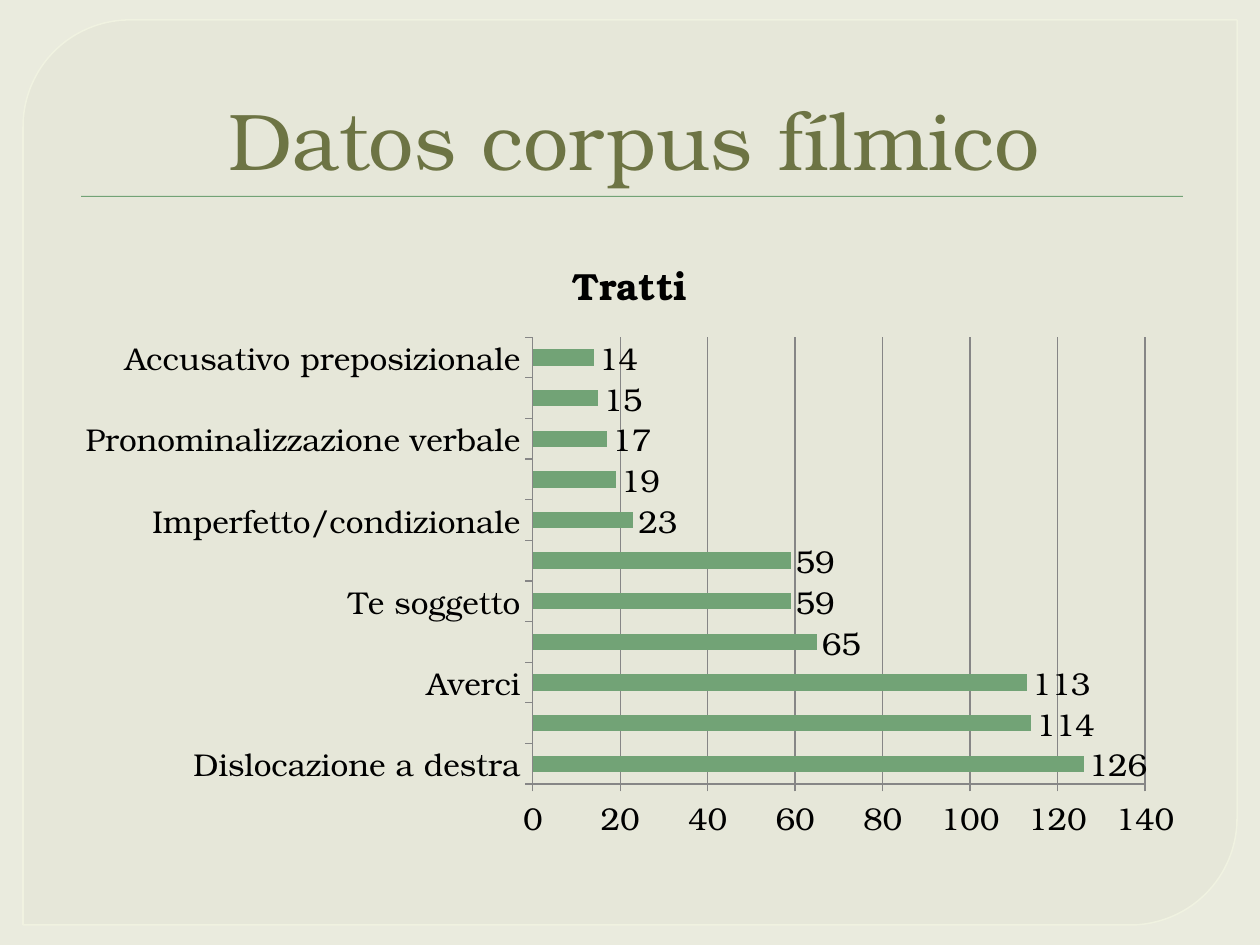
from lxml import etree
from pptx import Presentation
from pptx.chart.data import CategoryChartData
from pptx.dml.color import RGBColor
from pptx.enum.chart import XL_CHART_TYPE, XL_LABEL_POSITION, XL_TICK_MARK
from pptx.enum.shapes import MSO_SHAPE
from pptx.enum.text import MSO_ANCHOR, PP_ALIGN
from pptx.oxml.ns import qn
from pptx.util import Pt

BAR = XL_CHART_TYPE.BAR_CLUSTERED
OUTSIDE_END = XL_LABEL_POSITION.OUTSIDE_END
TICK_OUT = XL_TICK_MARK.OUTSIDE
PANEL_SHAPE = MSO_SHAPE.ROUND_2_DIAG_RECTANGLE
RULE_SHAPE = MSO_SHAPE.RECTANGLE

FONT = "TeX Gyre Bonum"
COLORS = {
    "background": "EAEBDE",
    "panel": "E5E6D7",
    "panel_edge": "F2F4E2",
    "green": "72A376",
    "heading": "6D7444",
    "text": "000000",
    "grid": "868686",
}
HEADING = "Datos corpus fílmico"
CHART_TITLE = "Tratti"
TRAITS = [
    ("Dislocazione a destra", 126),
    ("Dislocazione a sinistra", 114),
    ("Averci", 113),
    ("Congiuntivo/indicativo", 65),
    ("Te soggetto", 59),
    ("Doppio dativo", 59),
    ("Imperfetto/condizionale", 23),
    ("Fare polifunzionale", 19),
    ("Pronominalizzazione verbale", 17),
    ("Dativo GLI/LE", 15),
    ("Accusativo preposizionale", 14),
]
SLIDE = (1260, 945)
PANEL = (23, 20, 1214, 905)
RULE = (81, 196, 1102, 1)
HEADING_BOX = (63, 35, 1134, 158)
CHART_BOX = (63, 227, 1134, 624)


def px(*lengths):
    return [round(length * 914400 / 126) for length in lengths]


def color(name):
    return RGBColor.from_string(COLORS[name])


def paint(fill, name, opacity=100):
    fill.solid()
    fill.fore_color.rgb = color(name)
    if opacity < 100:
        srgb = fill._xPr.find(".//" + qn("a:srgbClr"))
        etree.SubElement(srgb, qn("a:alpha"), val=str(opacity * 1000))


def style(font, size, name, bold=False):
    font.name = FONT
    font.size = Pt(size)
    font.bold = bold
    font.color.rgb = color(name)


def add_backdrop(slide):
    paint(slide.background.fill, "background")
    panel = slide.shapes.add_shape(PANEL_SHAPE, *px(*PANEL))
    panel.shadow.inherit = False
    panel.adjustments[0] = 0.118
    panel.adjustments[1] = 0
    paint(panel.fill, "panel", 65)
    paint(panel.line.fill, "panel_edge", 88)
    panel.line.width = Pt(0.87)
    rule = slide.shapes.add_shape(RULE_SHAPE, *px(*RULE))
    rule.shadow.inherit = False
    paint(rule.fill, "green")
    rule.line.fill.background()


def add_heading(slide):
    frame = slide.shapes.add_textbox(*px(*HEADING_BOX)).text_frame
    frame.word_wrap = True
    frame.vertical_anchor = MSO_ANCHOR.BOTTOM
    paragraph = frame.paragraphs[0]
    paragraph.alignment = PP_ALIGN.CENTER
    paragraph._p.get_or_add_pPr().set("marL", str(px(8)[0]))
    run = paragraph.add_run()
    run.text = HEADING
    style(run.font, 46, "heading")


def add_traits_chart(slide):
    data = CategoryChartData()
    data.categories = [trait for trait, _ in TRAITS]
    data.add_series(CHART_TITLE, [count for _, count in TRAITS])
    chart = slide.shapes.add_chart(BAR, *px(*CHART_BOX), data).chart
    style(chart.font, 18, "text")
    chart.has_legend = False
    chart.has_title = True
    run = chart.chart_title.text_frame.paragraphs[0].add_run()
    run.text = CHART_TITLE
    style(run.font, 21.6, "text", bold=True)

    plot = chart.plots[0]
    plot.gap_width = 150
    plot.vary_by_categories = False
    paint(plot.series[0].format.fill, "green")
    plot.has_data_labels = True
    labels = plot.data_labels
    labels.show_value = True
    labels.position = OUTSIDE_END
    style(labels.font, 18, "text")

    for axis in (chart.category_axis, chart.value_axis):
        axis.major_tick_mark = TICK_OUT
        paint(axis.format.line.fill, "grid")
        style(axis.tick_labels.font, 18, "text")
    counts = chart.value_axis
    counts.minimum_scale, counts.maximum_scale, counts.major_unit = 0, 140, 20
    counts.has_major_gridlines = True
    paint(counts.major_gridlines.format.line.fill, "grid")


def main():
    deck = Presentation()
    deck.slide_width, deck.slide_height = px(*SLIDE)
    slide = deck.slides.add_slide(deck.slide_layouts[6])
    add_backdrop(slide)
    add_heading(slide)
    add_traits_chart(slide)
    deck.save("out.pptx")


if __name__ == "__main__":
    main()
